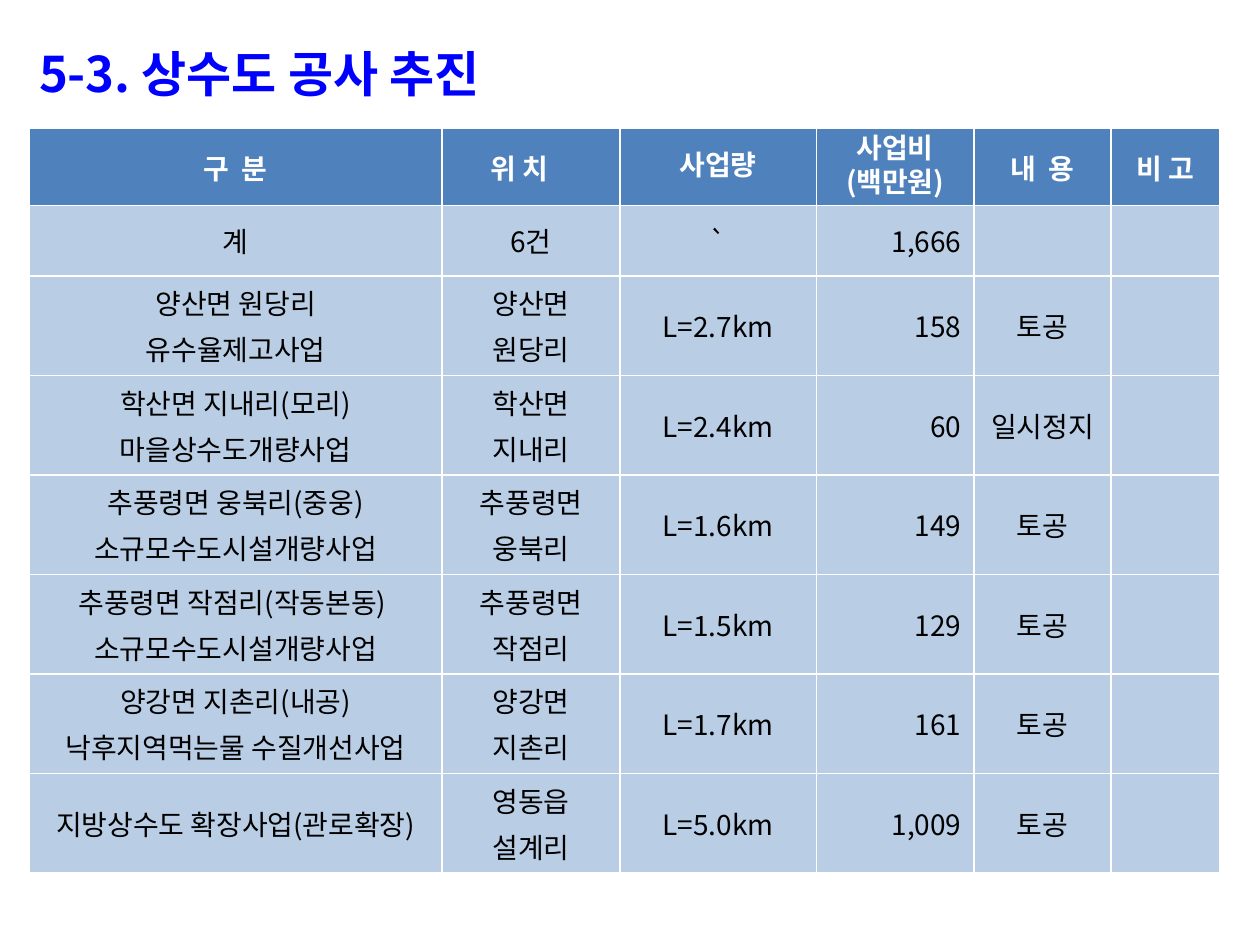
from lxml import etree
from pptx import Presentation
from pptx.dml.color import RGBColor
from pptx.enum.text import MSO_ANCHOR, PP_ALIGN
from pptx.oxml.ns import qn
from pptx.util import Inches, Pt

LEFT, CENTER, RIGHT = PP_ALIGN.LEFT, PP_ALIGN.CENTER, PP_ALIGN.RIGHT
MIDDLE = MSO_ANCHOR.MIDDLE
FONT = "Noto Sans CJK KR"
COLORS = {"title": "0000FF", "header": "4F81BD", "body": "B9CDE5",
          "white": "FFFFFF", "black": "000000"}

COLUMN_WIDTHS = [3.28, 1.41, 1.56, 1.25, 1.09, 0.86]
ROW_HEIGHTS = [0.61, 0.56] + [0.79] * 6
LOCATION, AMOUNT, COST = 1, 2, 3
ROWS = [
    ["구  분", "위 치", "사업량", "사업비\n(백만원)", "내  용", "비 고"],
    ["계", "6건", "`", "1,666", "", ""],
    ["양산면 원당리\n유수율제고사업", "양산면\n원당리", "L=2.7km", "158", "토공", ""],
    ["학산면 지내리(모리)\n마을상수도개량사업", "학산면\n지내리", "L=2.4km", "60", "일시정지", ""],
    ["추풍령면 웅북리(중웅)\n소규모수도시설개량사업", "추풍령면\n웅북리", "L=1.6km", "149", "토공", ""],
    ["추풍령면 작점리(작동본동) \n소규모수도시설개량사업", "추풍령면\n작점리", "L=1.5km", "129", "토공", ""],
    ["양강면 지촌리(내공)\n낙후지역먹는물 수질개선사업", "양강면\n지촌리", "L=1.7km", "161", "토공", ""],
    ["지방상수도 확장사업(관로확장)", "영동읍\n설계리", "L=5.0km", "1,009", "토공", ""],
]


def format_paragraph(paragraph, size, color, bold, alignment):
    paragraph.alignment = alignment
    font = paragraph.font
    font.size, font.bold, font.name = Pt(size), bold, FONT
    font.color.rgb = RGBColor.from_string(COLORS[color])
    # Korean text takes its typeface from the East Asian font
    latin = paragraph._p.pPr.find(qn("a:defRPr")).find(qn("a:latin"))
    east_asian = etree.Element(qn("a:ea"), typeface=FONT)
    latin.addnext(east_asian)


def add_borders(cell):
    properties = cell._tc.get_or_add_tcPr()
    for side in ("lnL", "lnR", "lnT", "lnB"):
        line = etree.SubElement(properties, qn(f"a:{side}"), w=str(Pt(1)))
        fill = etree.SubElement(line, qn("a:solidFill"))
        etree.SubElement(fill, qn("a:srgbClr"), val=COLORS["white"])


deck = Presentation()
deck.slide_width, deck.slide_height = Inches(10), Inches(7.5)
page = deck.slides.add_slide(deck.slide_layouts[5])

title = page.shapes.title
title.left, title.top = Inches(0.21), Inches(0.29)
title.width, title.height = Inches(4.17), Inches(0.57)
title.text_frame.text = "5-3. 상수도 공사 추진"
title.text_frame.vertical_anchor = MIDDLE
format_paragraph(title.text_frame.paragraphs[0], 28, "title", True, LEFT)

table = page.shapes.add_table(
    len(ROWS), len(COLUMN_WIDTHS), Inches(0.23), Inches(1.02),
    Inches(sum(COLUMN_WIDTHS)), Inches(sum(ROW_HEIGHTS))).table
for column, width in zip(table.columns, COLUMN_WIDTHS):
    column.width = Inches(width)
for row, height in zip(table.rows, ROW_HEIGHTS):
    row.height = Inches(height)

for row_index, texts in enumerate(ROWS):
    is_header = row_index == 0
    for column_index, text in enumerate(texts):
        cell = table.cell(row_index, column_index)
        cell.vertical_anchor = MIDDLE
        add_borders(cell)
        cell.fill.solid()
        cell.fill.fore_color.rgb = RGBColor.from_string(
            COLORS["header" if is_header else "body"])
        cell.text = text
        alignment = RIGHT if column_index == COST and not is_header else CENTER
        for index, paragraph in enumerate(cell.text_frame.paragraphs):
            if is_header and column_index in (AMOUNT, COST):
                paragraph.line_spacing = 0.7
            if index > 0:
                paragraph.space_before = Pt(3.2)
            format_paragraph(paragraph, 16, "white" if is_header else "black",
                             is_header, alignment)

# The location heading sits a little left of centre
table.cell(0, LOCATION).margin_right = Inches(0.28)

deck.save("out.pptx")
